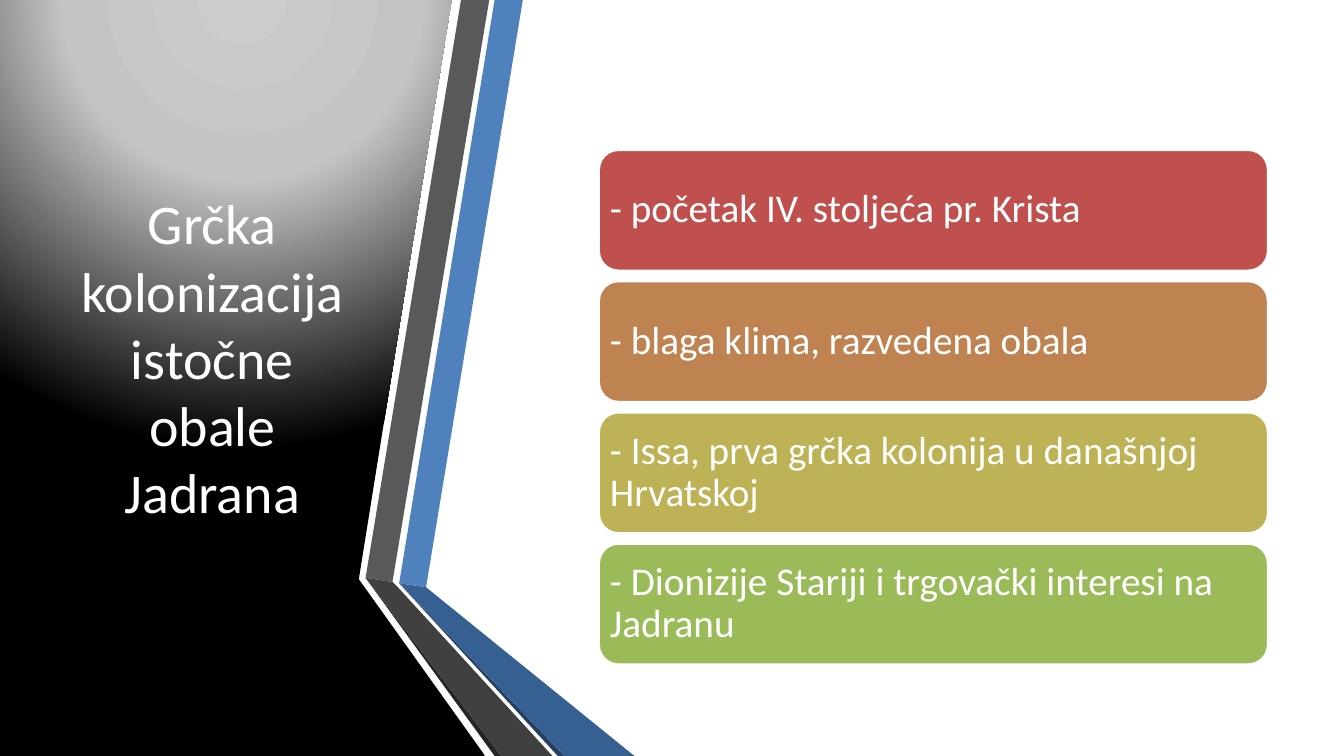
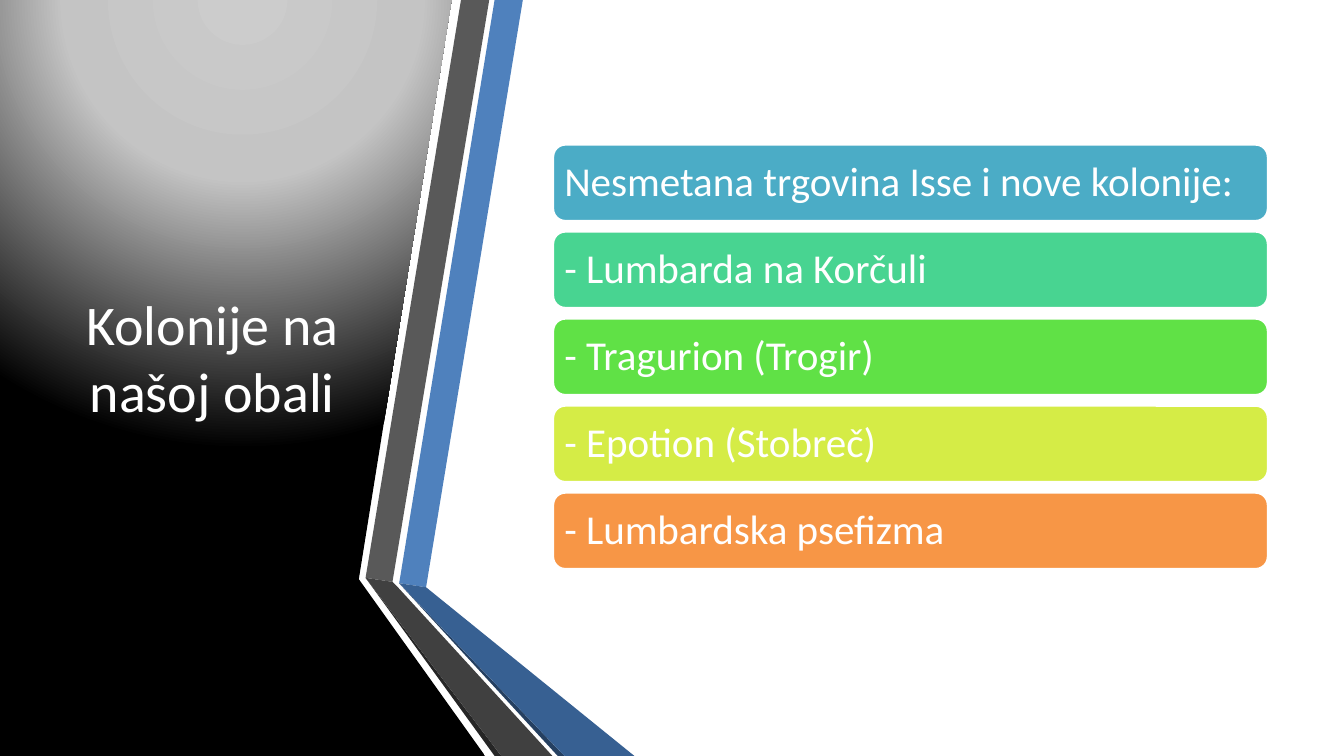
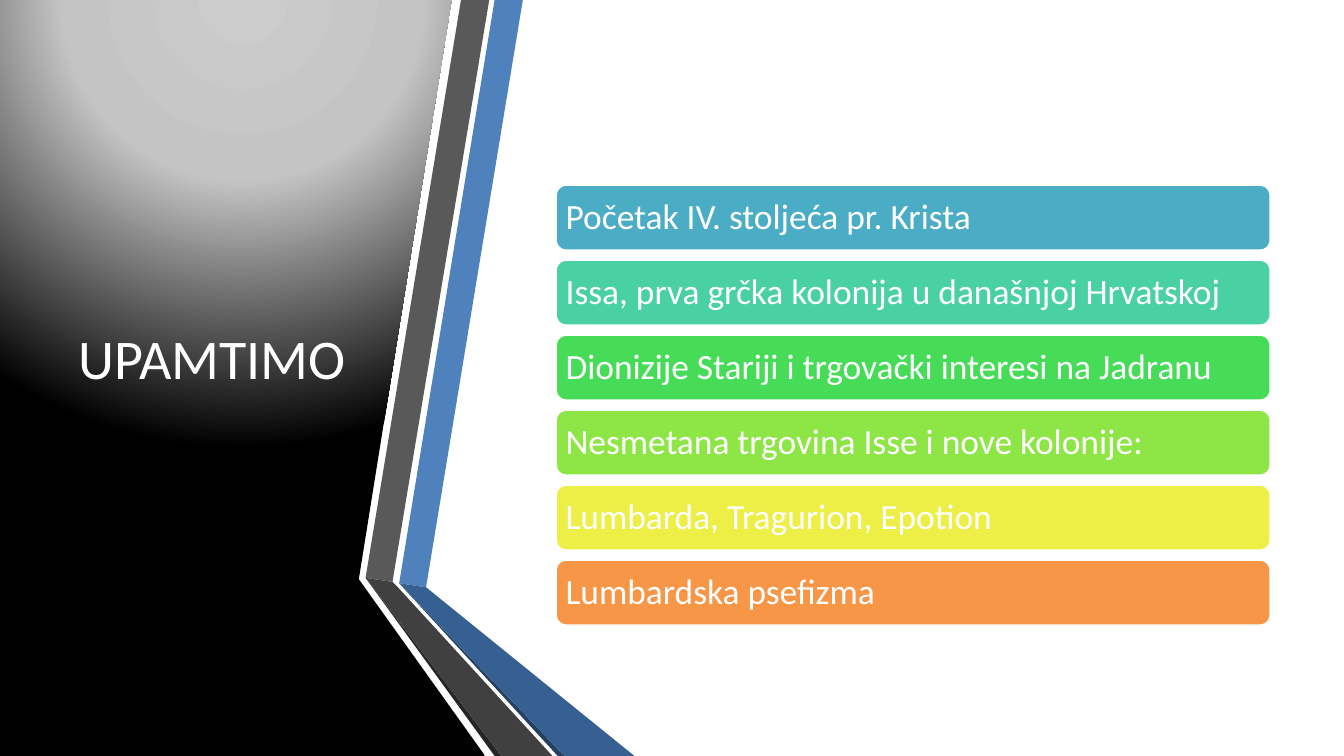
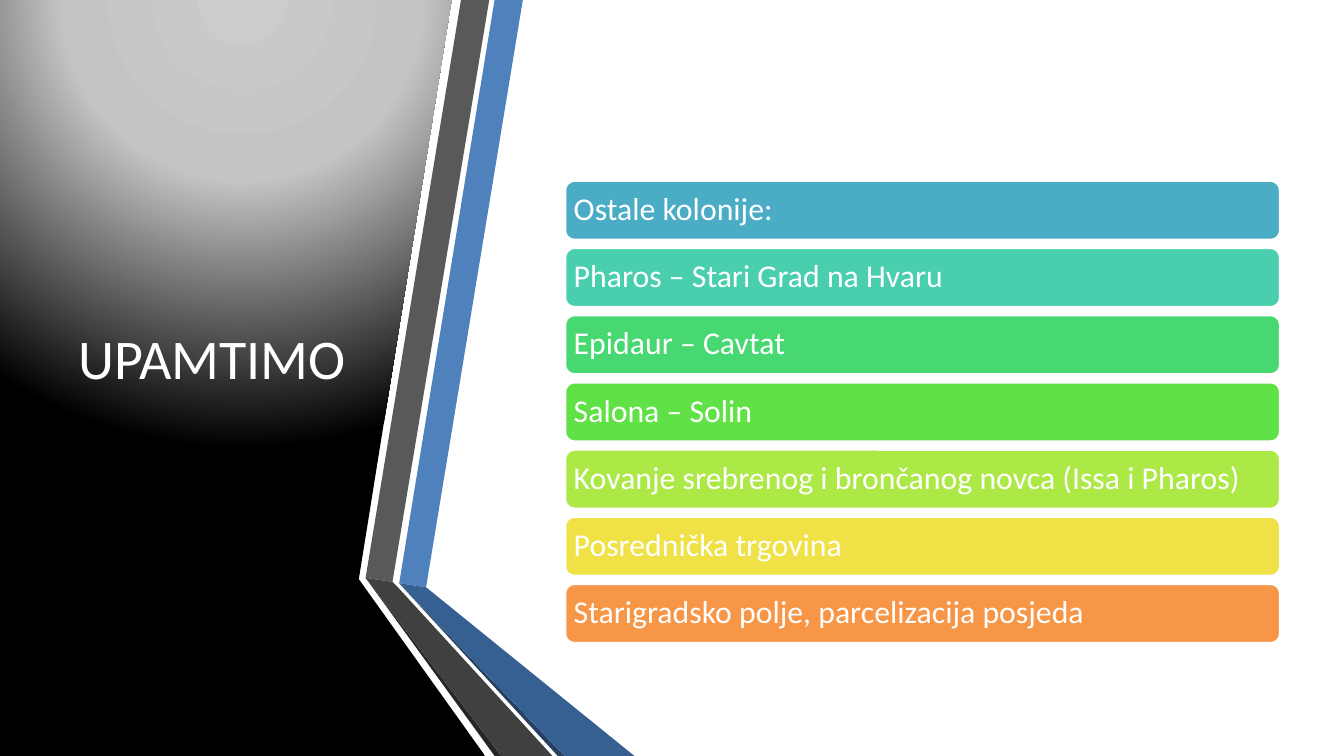
from pptx import Presentation
from pptx.dml.color import RGBColor as RGB
from pptx.enum.shapes import MSO_SHAPE as SHAPE
from pptx.enum.text import MSO_ANCHOR as ANCHOR, PP_ALIGN as ALIGN
from pptx.oxml import parse_xml
from pptx.util import Inches, Pt

FONT = "Calibri"
WHITE = RGB(0xFF, 0xFF, 0xFF)
BLUE = RGB(0x4F, 0x81, 0xBD)
MID_BLUE = RGB(0x37, 0x60, 0x92)
DARK_BLUE = RGB(0x25, 0x40, 0x61)
GREY = RGB(0x59, 0x59, 0x59)
MID_GREY = RGB(0x40, 0x40, 0x40)
DARK_GREY = RGB(0x26, 0x26, 0x26)
RED = RGB(0xC0, 0x50, 0x4D)
BROWN = RGB(0xBE, 0x83, 0x51)
OCHRE = RGB(0xBD, 0xB2, 0x55)
OLIVE = RGB(0x9B, 0xBB, 0x59)
TEAL = RGB(0x4B, 0xAC, 0xC6)
ORANGE = RGB(0xF7, 0x96, 0x46)
SEA = RGB(0x48, 0xD4, 0x91)
GREEN = RGB(0x60, 0xE1, 0x46)
LIME = RGB(0xD5, 0xEC, 0x46)
MINT = RGB(0x49, 0xD1, 0xA3)
EMERALD = RGB(0x47, 0xDC, 0x57)
LEAF = RGB(0x8D, 0xE6, 0x46)
YELLOW = RGB(0xEE, 0xEF, 0x46)
TURQUOISE = RGB(0x49, 0xCF, 0xAE)
JADE = RGB(0x47, 0xD8, 0x72)
PEAR = RGB(0xAC, 0xE9, 0x46)
GOLD = RGB(0xF0, 0xE1, 0x46)

WIDTH = 10
HEIGHT = WIDTH * 9 / 16
PANEL = [(0, 0), (3.36, 0), (2.67, 4.31), (3.61, HEIGHT), (0, HEIGHT)]
PANEL_GLOW = """
<a:gradFill xmlns:a="http://schemas.openxmlformats.org/drawingml/2006/main" rotWithShape="1">
  <a:gsLst>
    <a:gs pos="0"><a:srgbClr val="CCCCCC"/></a:gs>
    <a:gs pos="40000"><a:srgbClr val="C4C4C4"/></a:gs>
    <a:gs pos="100000"><a:srgbClr val="000000"/></a:gs>
  </a:gsLst>
  <a:path path="circle"><a:fillToRect l="50000" t="-80000" r="50000" b="180000"/></a:path>
</a:gradFill>"""
RIBBONS = [
    (BLUE, [(2.97, 4.34), (3.17, 4.37), (3.89, 0), (3.68, 0)]),
    (GREY, [(3.64, 0), (3.43, 0), (2.72, 4.3), (2.92, 4.33)]),
    (DARK_GREY, [(2.72, 4.3), (3.68, HEIGHT), (3.73, HEIGHT)]),
    (DARK_BLUE, [(2.97, 4.34), (4.15, HEIGHT), (4.2, HEIGHT)]),
    (MID_BLUE, [(2.97, 4.34), (4.2, HEIGHT), (4.72, HEIGHT), (3.17, 4.37)]),
    (MID_GREY, [(4.11, HEIGHT), (2.96, 4.37), (2.92, 4.33), (2.72, 4.3), (3.73, HEIGHT)]),
]
# Share of a rounded bar's height by which its corners push the text inwards
CORNER_INSET = 0.05

SLIDES = [
    dict(title="Grčka kolonizacija istočne obale Jadrana",
         left=4.45, width=4.99, height=0.91, first_top=1.11, last_top=4.04, size=21, inset=0.09,
         bars=[("- početak IV. stoljeća pr. Krista", RED),
               ("- blaga klima, razvedena obala", BROWN),
               ("- Issa, prva grčka kolonija u današnjoj Hrvatskoj", OCHRE),
               ("- Dionizije Stariji i trgovački interesi na Jadranu", OLIVE)]),
    dict(title="Kolonije na našoj obali",
         left=4.11, width=5.33, height=0.58, first_top=1.07, last_top=3.66, size=22, inset=0.09,
         bars=[("Nesmetana trgovina Isse i nove kolonije:", TEAL),
               ("- Lumbarda na Korčuli", SEA),
               ("- Tragurion (Trogir)", GREEN),
               ("- Epotion (Stobreč)", LIME),
               ("- Lumbardska psefizma", ORANGE)]),
    dict(title="UPAMTIMO",
         left=4.13, width=5.33, height=0.5, first_top=1.37, last_top=4.16, size=19, inset=0.08,
         bars=[("Početak IV. stoljeća pr. Krista", TEAL),
               ("Issa, prva grčka kolonija u današnjoj Hrvatskoj", MINT),
               ("Dionizije Stariji i trgovački interesi na Jadranu", EMERALD),
               ("Nesmetana trgovina Isse i nove kolonije:", LEAF),
               ("Lumbarda, Tragurion, Epotion", YELLOW),
               ("Lumbardska psefizma", ORANGE)]),
    dict(title="UPAMTIMO",
         left=4.2, width=5.33, height=0.45, first_top=1.34, last_top=4.34, size=17, inset=0.07,
         bars=[("Ostale kolonije:", TEAL),
               ("Pharos – Stari Grad na Hvaru", TURQUOISE),
               ("Epidaur – Cavtat", JADE),
               ("Salona – Solin", GREEN),
               ("Kovanje srebrenog i brončanog novca (Issa i Pharos)", PEAR),
               ("Posrednička trgovina", GOLD),
               ("Starigradsko polje, parcelizacija posjeda", ORANGE)]),
]


def add_polygon(slide, points):
    """Add a closed, unlined outline through points given in inches."""
    start, *rest = [(Inches(x), Inches(y)) for x, y in points]
    builder = slide.shapes.build_freeform(*start)
    builder.add_line_segments(rest, close=True)
    polygon = builder.convert_to_shape()
    polygon.shadow.inherit = False
    polygon.line.fill.background()
    return polygon


def write_text(shape, text, size, align):
    """Write one white paragraph, wrapped and centred vertically."""
    frame = shape.text_frame
    frame.word_wrap = True
    frame.vertical_anchor = ANCHOR.MIDDLE
    paragraph = frame.paragraphs[0]
    paragraph.alignment = align
    run = paragraph.add_run()
    run.text = text
    for name, value in dict(name=FONT, size=Pt(size)).items():
        setattr(run.font, name, value)
    run.font.color.rgb = WHITE
    return frame


deck = Presentation()
deck.slide_width, deck.slide_height = Inches(WIDTH), Inches(HEIGHT)

for content in SLIDES:
    slide = deck.slides.add_slide(deck.slide_layouts[6])

    panel = add_polygon(slide, PANEL)
    panel.fill.background()
    properties = panel.element.spPr
    no_fill = properties.find("{http://schemas.openxmlformats.org/drawingml/2006/main}noFill")
    properties.replace(no_fill, parse_xml(PANEL_GLOW))

    for color, points in RIBBONS:
        ribbon = add_polygon(slide, points)
        ribbon.fill.solid()
        ribbon.fill.fore_color.rgb = color

    title = slide.shapes.add_textbox(Inches(0.44), Inches(0.56), Inches(2.28), Inches(4.19))
    write_text(title, content["title"], 30, ALIGN.CENTER)

    bars, height = content["bars"], content["height"]
    pitch = (content["last_top"] - content["first_top"]) / (len(bars) - 1)
    inset = Inches(content["inset"] - CORNER_INSET * height)
    for row, (text, color) in enumerate(bars):
        bar = slide.shapes.add_shape(
            SHAPE.ROUNDED_RECTANGLE, Inches(content["left"]),
            Inches(content["first_top"] + row * pitch), Inches(content["width"]), Inches(height))
        bar.shadow.inherit = False
        bar.fill.solid()
        bar.fill.fore_color.rgb = color
        bar.line.color.rgb = WHITE
        bar.line.width = Pt(2)
        frame = write_text(bar, text, content["size"], ALIGN.LEFT)
        frame.paragraphs[0].line_spacing = 0.9
        for side in ("left", "top", "right", "bottom"):
            setattr(frame, f"margin_{side}", inset)

deck.save("out.pptx")
